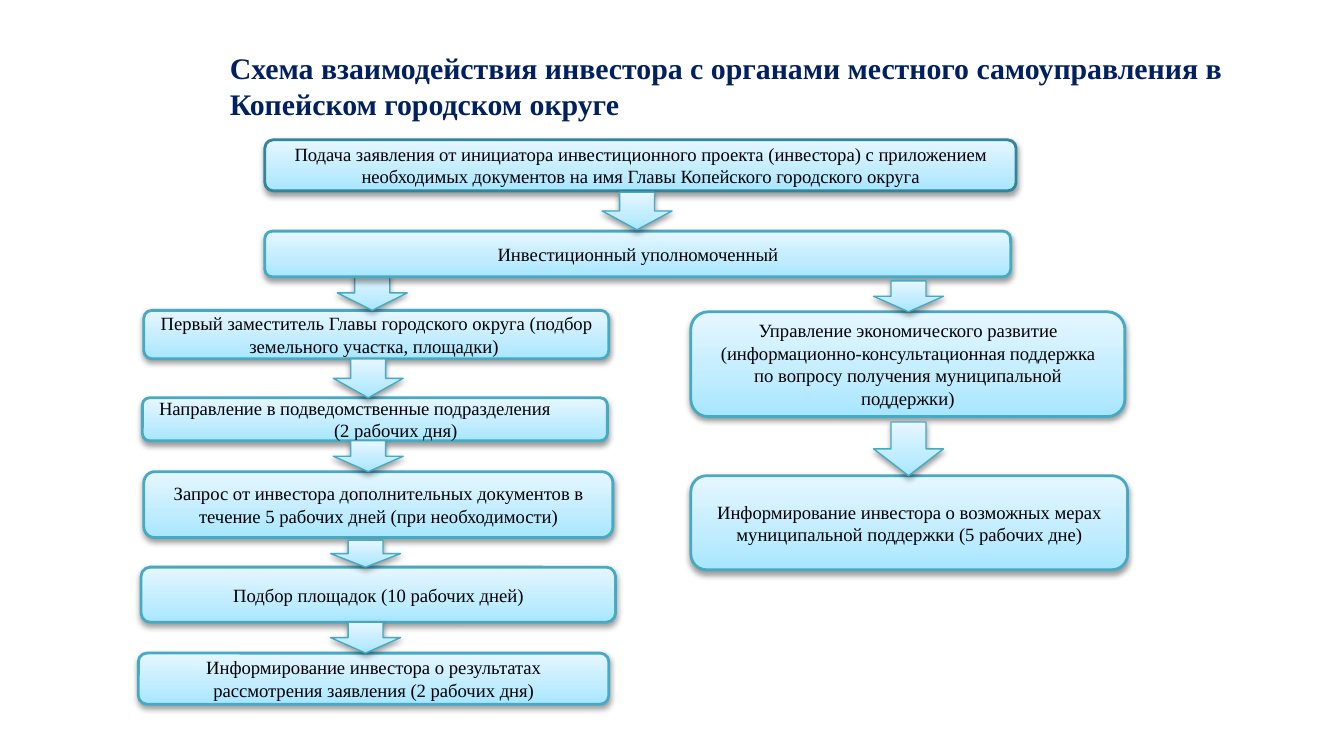
import pptx
import pptx.dml.color
import pptx.enum.shapes
import pptx.enum.text
import pptx.oxml
import pptx.oxml.ns
import pptx.util

PX = 9144
FONT = "Times New Roman"
NAVY, BLACK, TEAL, DARK_TEAL = "002060", "000000", "46AAC4", "31859C"
STOPS = [(0, "A6E6FF"), (35, "BFECFF"), (100, "E6F7FF")]
KINDS = pptx.enum.shapes.MSO_SHAPE
ALIGN = pptx.enum.text.PP_ALIGN


def px(length):
    """Turn px (100 to the inch) into EMU."""
    return pptx.util.Emu(length * PX)


def rgb(value):
    """Turn a hex string into a colour."""
    return pptx.dml.color.RGBColor.from_string(value)


def add_run(paragraph, text, size, color, bold=False):
    """Add one formatted run."""
    run = paragraph.add_run()
    run.text = text
    run.font.name = FONT
    run.font.size = pptx.util.Pt(size)
    run.font.bold = bold
    run.font.color.rgb = rgb(color)


def add_glossy(slide, kind, box, color, weight):
    """Add a shape with the icy gradient, an outline and a soft shadow."""
    shape = slide.shapes.add_shape(kind, *map(px, box))
    shape.line.color.rgb = rgb(color)
    shape.line.width = pptx.util.Pt(weight)
    namespace = pptx.oxml.ns.nsdecls("a")
    stops = "".join(
        f'<a:gs pos="{position * 1000}"><a:srgbClr val="{value}"/></a:gs>'
        for position, value in STOPS
    )
    properties = shape.element.spPr
    properties.insert(2, pptx.oxml.parse_xml(
        f'<a:gradFill {namespace} rotWithShape="1"><a:gsLst>{stops}</a:gsLst>'
        '<a:lin ang="16200000" scaled="1"/></a:gradFill>'))
    shape.shadow.inherit = False
    properties.find(pptx.oxml.ns.qn("a:effectLst")).append(pptx.oxml.parse_xml(
        f'<a:outerShdw {namespace} blurRad="40000" dist="20000" dir="5400000" '
        f'rotWithShape="0"><a:srgbClr val="{BLACK}"><a:alpha val="38000"/>'
        '</a:srgbClr></a:outerShdw>'))
    return shape


def add_step(slide, box, lines, color=TEAL):
    """Add a rounded step; each line is its text, alignment and left indent."""
    step = add_glossy(slide, KINDS.ROUNDED_RECTANGLE, box, color, 1.5)
    frame = step.text_frame
    frame.word_wrap = True
    frame.vertical_anchor = pptx.enum.text.MSO_ANCHOR.MIDDLE
    for index, (text, align, indent) in enumerate(lines):
        paragraph = frame.add_paragraph() if index else frame.paragraphs[0]
        paragraph.alignment = align
        if indent:
            paragraph._p.get_or_add_pPr().set("marL", str(px(indent)))
        add_run(paragraph, text, 10, BLACK)


def centred(text):
    """Describe a step with one centred paragraph."""
    return [(text, ALIGN.CENTER, 0)]


def draw_title(slide, box, text):
    """Place and format the slide title."""
    title = slide.shapes.title
    title.left, title.top, title.width, title.height = map(px, box)
    frame = title.text_frame
    frame.word_wrap = True
    frame.auto_size = pptx.enum.text.MSO_AUTO_SIZE.NONE
    frame.vertical_anchor = pptx.enum.text.MSO_ANCHOR.MIDDLE
    frame.paragraphs[0].alignment = ALIGN.LEFT
    add_run(frame.paragraphs[0], text, 16, NAVY, True)


def draw_flow(slide, origin, steps, arrows):
    """Draw steps and then down arrows, relative to the flow's top left corner."""
    left, top = origin
    for (x, y, width, height), *content in steps:
        add_step(slide, (left + x, top + y, width, height), *content)
    for x, y, height in arrows:
        add_glossy(slide, KINDS.DOWN_ARROW,
                   (left + x, top + y, 52, height), TEAL, 0.75)


APPLICATION_STEPS = [
    ((0, 0, 559, 38), centred(
        "Подача заявления от инициатора инвестиционного проекта (инвестора) с "
        "приложением необходимых документов на имя Главы Копейского городского "
        "округа"), DARK_TEAL),
    ((0, 68, 555, 34), centred("Инвестиционный уполномоченный")),
]
SITE_STEPS = [
    ((4, 26, 346, 36), centred(
        "Первый заместитель Главы городского округа (подбор земельного участка, "
        "площадки) ")),
    ((3, 91, 346, 32), [
        ("Направление в подведомственные подразделения", ALIGN.LEFT, 1),
        ("(2 рабочих дня)", ALIGN.CENTER, 31)]),
    ((4, 146, 349, 49), centred(
        "Запрос от инвестора дополнительных документов в течение 5 рабочих дней "
        "(при необходимости)")),
    ((2, 217, 353, 41), centred("Подбор площадок (10 рабочих дней)")),
    ((0, 281, 350, 38), centred(
        "Информирование инвестора о результатах рассмотрения заявления "
        "(2 рабочих дня)")),
]
SUPPORT_STEPS = [
    ((0, 23, 323, 78), centred(
        "Управление экономического развитие (информационно-консультационная "
        "поддержка по вопросу получения муниципальной поддержки)")),
    ((0, 145, 325, 70), centred(
        "Информирование инвестора о возможных мерах муниципальной поддержки "
        "(5 рабочих дне)")),
]


def main():
    """Build the slide and save it."""
    deck = pptx.Presentation()
    deck.slide_width = px(1000)
    deck.slide_height = deck.slide_width * 9 // 16
    slide = deck.slides.add_slide(deck.slide_layouts[5])
    draw_title(slide, (161, 29, 803, 69),
               "Схема взаимодействия инвестора с органами местного "
               "самоуправления в Копейском городском округе")
    draw_flow(slide, (103, 205), SITE_STEPS, [
        (148, 0, 26), (145, 62, 29), (145, 123, 23),
        (143, 197, 20), (143, 258, 23)])
    draw_flow(slide, (197, 104), APPLICATION_STEPS, [(251, 39, 28)])
    draw_flow(slide, (514, 209), SUPPORT_STEPS, [(136, 0, 23), (136, 105, 40)])
    deck.save("out.pptx")


if __name__ == "__main__":
    main()
